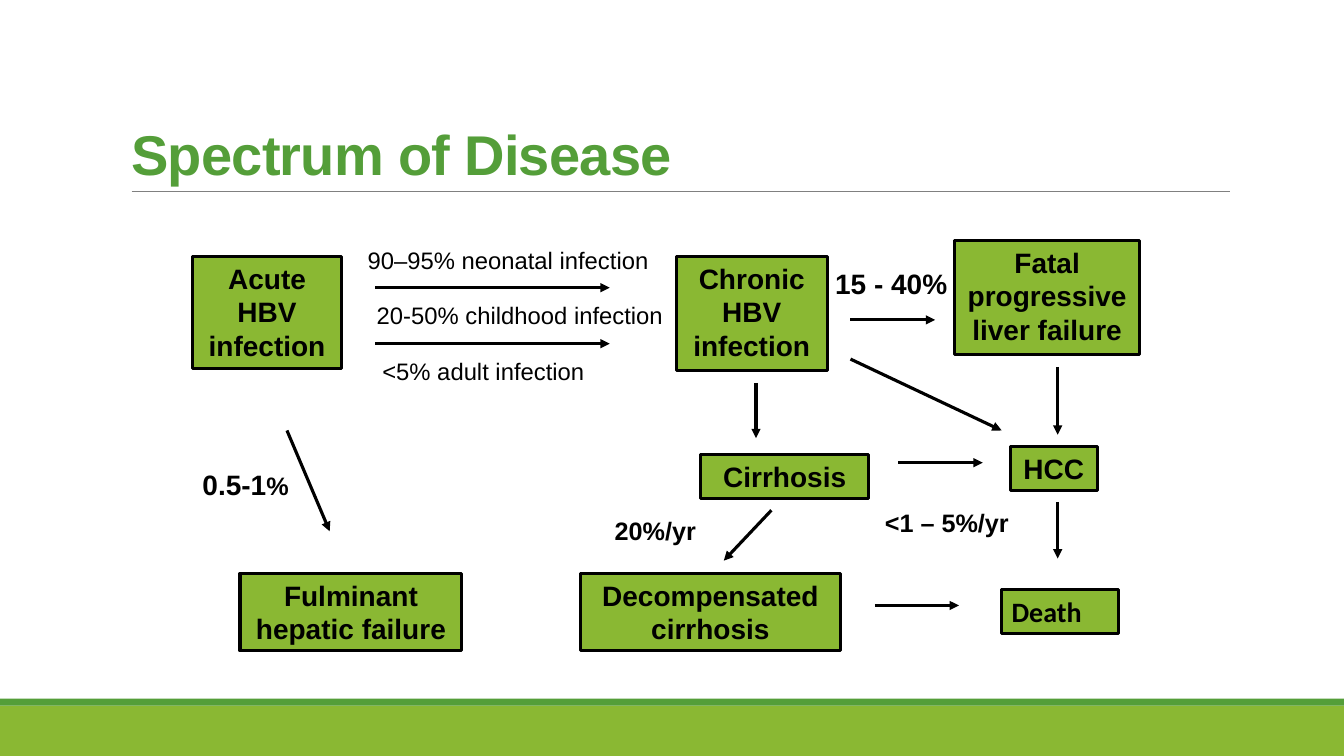
from lxml.etree import SubElement
from pptx import Presentation
from pptx.dml.color import RGBColor
from pptx.enum.shapes import MSO_CONNECTOR, MSO_SHAPE
from pptx.enum.text import MSO_ANCHOR, MSO_AUTO_SIZE, PP_ALIGN
from pptx.oxml.ns import qn
from pptx.util import Pt

THEME = {
    "lime": RGBColor(0x8A, 0xB8, 0x33),
    "green": RGBColor(0x54, 0x9E, 0x39),
    "gray": RGBColor(0x80, 0x80, 0x80),
    "black": RGBColor(0, 0, 0),
    "title": {"name": "Arial", "size": Pt(40), "bold": True},
    "stage": {"name": "Arial", "size": Pt(20), "bold": True},
    "outcome": {"name": "Calibri", "size": Pt(20), "bold": True},
    "rate": {"name": "Arial", "size": Pt(18), "bold": True},
    "route": {"name": "Arial", "size": Pt(17), "bold": False},
}
FRAME = {"word_wrap": True, "auto_size": MSO_AUTO_SIZE.NONE, "vertical_anchor": MSO_ANCHOR.TOP}


def write(shape, runs, color, alignment=PP_ALIGN.LEFT, **frame_changes):
    """Fill a shape with one paragraph of (text, style) runs."""
    for name, value in (FRAME | frame_changes).items():
        setattr(shape.text_frame, name, value)
    paragraph = shape.text_frame.paragraphs[0]
    paragraph.alignment = alignment
    for text, style in runs:
        run = paragraph.add_run()
        run.text = text
        for name, value in THEME[style].items():
            setattr(run.font, name, value)
        run.font.color.rgb = THEME[color]
    return paragraph


def draw_line(ends, color, width, arrow=False):
    """Draw a straight line, with an arrowhead at its end if wanted."""
    connector = slide.shapes.add_connector(MSO_CONNECTOR.STRAIGHT, *map(Pt, ends))
    connector.line.color.rgb = THEME[color]
    connector.line.width = Pt(width)
    properties = connector.element.spPr
    if arrow:
        SubElement(properties.find(qn("a:ln")), qn("a:tailEnd"), type="triangle")
    SubElement(properties, qn("a:effectLst"))


presentation = Presentation()
presentation.slide_width, presentation.slide_height = Pt(960), Pt(540)
slide = presentation.slides.add_slide(presentation.slide_layouts[5])

# Footer bands and title rule
for top, height, color in [(504, 36, "lime"), (499, 5, "green")]:
    band = slide.shapes.add_shape(MSO_SHAPE.RECTANGLE, 0, Pt(top), Pt(960), Pt(height))
    band.shadow.inherit = False
    band.fill.solid()
    band.fill.fore_color.rgb = THEME[color]
    band.line.fill.background()
draw_line((94, 136.5, 878.5, 136.5), "gray", 0.5)

# Title
title = slide.shapes.title
title.left, title.top, title.width, title.height = map(Pt, (86.5, 22.5, 792, 114.5))
heading = write(title, [("Spectrum of Disease", "title")], "green",
                vertical_anchor=MSO_ANCHOR.BOTTOM)
heading.line_spacing = 0.85
heading.runs[0].font._element.set("spc", "-50")

# Disease stages
stages = [
    ("Acute HBV infection", 137.5, 183, 106.5, 80),
    ("Chronic HBV infection", 483, 183, 108, 81.5),
    ("Fatal progressive liver failure", 682, 171.5, 132, 81.5),
    ("Cirrhosis", 500.5, 324.5, 120, 31.5),
    ("HCC", 721.5, 319, 62.5, 31.5),
    ("Death", 715.5, 421, 83.5, 31.5),
    ("Decompensated cirrhosis", 414.5, 409.5, 186, 55.5),
    ("Fulminant hepatic failure", 171.5, 409.5, 158.5, 55.5),
]
for text, *place in stages:
    box = slide.shapes.add_shape(MSO_SHAPE.RECTANGLE, *map(Pt, place))
    box.shadow.inherit = False
    box.fill.solid()
    box.fill.fore_color.rgb = THEME["lime"]
    box.line.color.rgb = THEME["black"]
    box.line.width = Pt(2.25)
    if text == "Death":
        write(box, [(text, "outcome")], "black")
    else:
        write(box, [(text, "stage")], "black", PP_ALIGN.CENTER)

# Arrows between stages
arrows = [
    (268, 205.5, 435.5, 205.5),
    (268, 245.5, 435.5, 245.5),
    (205, 307.5, 235.5, 379.5),
    (607.5, 228.5, 668, 228.5),
    (607.5, 256.5, 715.5, 307.5),
    (540, 273.5, 540, 313),
    (641.5, 330.5, 702, 330.5),
    (755.5, 262, 755.5, 310.5),
    (755.5, 358.5, 755.5, 399),
    (551, 364.5, 517, 400.5),
    (625, 432.5, 685, 432.5),
]
for ends in arrows:
    draw_line(ends, "black", 2.25, arrow=True)

# Progression rates
labels = [
    ([("90–95% neonatal infection", "route")], 255.5, 172, 233, 29),
    ([("20-50% childhood infection", "route")], 262, 211.5, 227, 28),
    ([("<5% adult infection", "route")], 266, 251.5, 240, 28),
    ([("15 - 40%", "stage")], 589.5, 187, 102, 31.5),
    ([("0.5-1", "stage"), ("%", "rate")], 137.5, 330.5, 85, 31.5),
    ([("20%/yr", "rate")], 432, 364.5, 79, 29),
    ([("<1 – 5%/yr", "rate")], 625, 358.5, 108, 29),
]
for runs, *place in labels:
    write(slide.shapes.add_textbox(*map(Pt, place)), runs, "black")

presentation.save("out.pptx")
